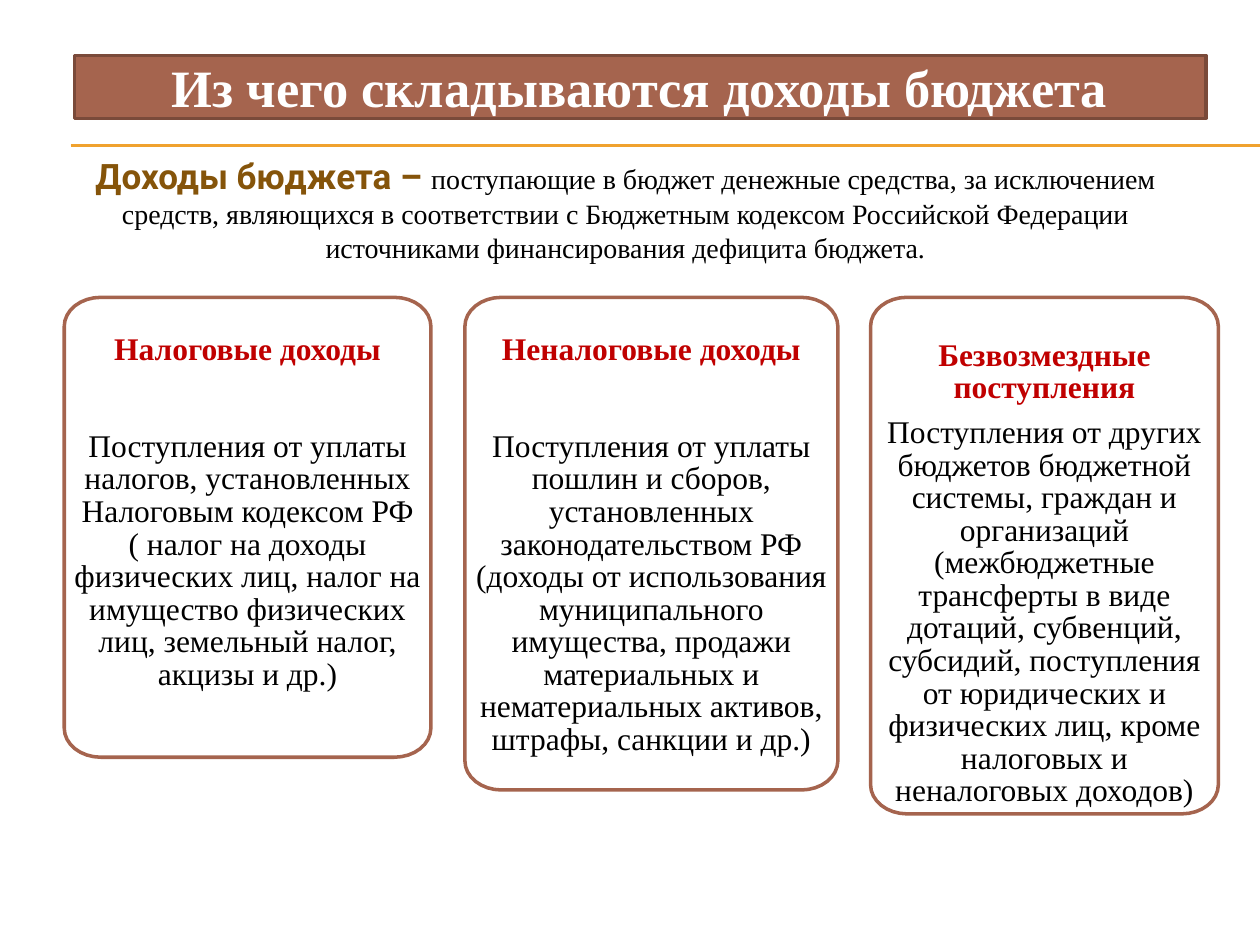
import math

from pptx import Presentation
from pptx.dml.color import RGBColor
from pptx.enum.shapes import MSO_CONNECTOR, MSO_SHAPE
from pptx.enum.text import MSO_ANCHOR, PP_ALIGN
from pptx.oxml.ns import qn
from pptx.util import Inches, Pt

STRAIGHT = MSO_CONNECTOR.STRAIGHT
RECTANGLE = MSO_SHAPE.RECTANGLE
TOP = MSO_ANCHOR.TOP
CENTER = PP_ALIGN.CENTER

WHITE = RGBColor(0xFF, 0xFF, 0xFF)
BLACK = RGBColor(0x00, 0x00, 0x00)
RED = RGBColor(0xC0, 0x00, 0x00)
BROWN = RGBColor(0xA5, 0x64, 0x4E)
DARK_BROWN = RGBColor(0x7A, 0x4A, 0x3A)
OCHRE = RGBColor(0x85, 0x54, 0x0A)
AMBER = RGBColor(0xF0, 0xA2, 0x2E)

SERIF = "Times New Roman"
SANS = "Roboto"

CORNER_WIDTH = Inches(0.29)
CORNER_HEIGHT = Inches(0.23)
CORNER_STEPS = 8

CARDS = [
    {
        "box": (0.51, 2.36, 2.91, 3.65),
        "title": "Налоговые доходы",
        "body": "Поступления от уплаты налогов, установленных Налоговым "
                "кодексом РФ\v( налог на доходы физических лиц, налог на "
                "имущество физических лиц, земельный налог, акцизы и др.)",
        "title_top": 0.29,
        "body_gap": 37,
    },
    {
        "box": (3.69, 2.36, 2.96, 3.91),
        "title": "Неналоговые доходы",
        "body": "Поступления от уплаты пошлин и сборов, установленных "
                "законодательством РФ (доходы от использования "
                "муниципального имущества, продажи материальных и "
                "нематериальных активов, штрафы, санкции и др.)",
        "title_top": 0.29,
        "body_gap": 37,
    },
    {
        "box": (6.91, 2.36, 2.76, 4.1),
        "title": "Безвозмездные\vпоступления",
        "body": "Поступления от других бюджетов бюджетной системы, граждан и "
                "организаций (межбюджетные трансферты в виде дотаций, "
                "субвенций, субсидий, поступления от юридических и "
                "физических лиц, кроме налоговых и неналоговых доходов)",
        "title_top": 0.34,
        "body_gap": 7,
    },
]


def to_lengths(box):
    return [Inches(value) for value in box]


def style_font(font, name, size, color, bold=False):
    font.name = name
    font.size = Pt(size)
    font.color.rgb = color
    font.bold = bold


def style_outline(shape, fill, line):
    shape.shadow.inherit = False
    shape.fill.solid()
    shape.fill.fore_color.rgb = fill
    shape.line.color.rgb = line
    shape.line.width = Pt(2)


def prepare_frame(shape, margin_top=0):
    frame = shape.text_frame
    frame.word_wrap = True
    frame.vertical_anchor = TOP
    frame.margin_left = frame.margin_right = frame.margin_bottom = 0
    frame.margin_top = Inches(margin_top)
    return frame


def add_heading(slide, box, text):
    banner = slide.shapes.add_shape(RECTANGLE, *to_lengths(box))
    style_outline(banner, BROWN, DARK_BROWN)
    paragraph = prepare_frame(banner).paragraphs[0]
    paragraph.text = text
    paragraph.alignment = CENTER
    style_font(paragraph.font, SERIF, 30, WHITE, True)


def add_divider(slide, left, right, heights):
    for y in heights:
        rule = slide.shapes.add_connector(
            STRAIGHT, Inches(left), Inches(y), Inches(right), Inches(y))
        rule.line.color.rgb = AMBER
        rule.line.width = Pt(0.75)
        properties = rule._element.spPr
        properties.append(properties.makeelement(qn("a:effectLst"), {}))


def add_definition(slide, box, term, meaning):
    definition = slide.shapes.add_textbox(*to_lengths(box))
    paragraph = prepare_frame(definition).paragraphs[0]
    paragraph.alignment = CENTER
    term_run = paragraph.add_run()
    term_run.text = term
    style_font(term_run.font, SANS, 20, OCHRE, True)
    meaning_run = paragraph.add_run()
    meaning_run.text = meaning
    style_font(meaning_run.font, SERIF, 16, BLACK)


def rounded_outline(left, top, width, height):
    right, bottom = left + width, top + height
    corners = [
        (right - CORNER_WIDTH, top + CORNER_HEIGHT, -90),
        (right - CORNER_WIDTH, bottom - CORNER_HEIGHT, 0),
        (left + CORNER_WIDTH, bottom - CORNER_HEIGHT, 90),
        (left + CORNER_WIDTH, top + CORNER_HEIGHT, 180),
    ]
    points = []
    for center_x, center_y, start in corners:
        for step in range(CORNER_STEPS + 1):
            angle = math.radians(start + 90 * step / CORNER_STEPS)
            points.append((round(center_x + CORNER_WIDTH * math.cos(angle)),
                           round(center_y + CORNER_HEIGHT * math.sin(angle))))
    return points


def add_card(slide, box, title, body, title_top, body_gap):
    first, *rest = rounded_outline(*to_lengths(box))
    builder = slide.shapes.build_freeform(*first)
    builder.add_line_segments(rest, close=True)
    card = builder.convert_to_shape()
    style_outline(card, WHITE, BROWN)
    frame = prepare_frame(card, title_top)
    title_paragraph = frame.paragraphs[0]
    body_paragraph = frame.add_paragraph()
    title_paragraph.text = title
    body_paragraph.text = body
    body_paragraph.space_before = Pt(body_gap)
    style_font(title_paragraph.font, SERIF, 18, RED, True)
    style_font(body_paragraph.font, SERIF, 18, BLACK)
    for paragraph in frame.paragraphs:
        paragraph.alignment = CENTER
        paragraph.line_spacing = Pt(18.6)


def main():
    presentation = Presentation()
    presentation.slide_width = Inches(10)
    presentation.slide_height = Inches(7.5)
    slide = presentation.slides.add_slide(presentation.slide_layouts[6])
    add_divider(slide, 0.56, 10, (1.15, 1.16))
    add_definition(
        slide, (0.6, 1.23, 8.73, 0.88), "Доходы бюджета – ",
        "поступающие в бюджет денежные средства, за исключением средств, "
        "являющихся в соответствии с Бюджетным кодексом Российской Федерации "
        "источниками финансирования дефицита бюджета.")
    for card in CARDS:
        add_card(slide, **card)
    add_heading(slide, (0.59, 0.44, 8.98, 0.5),
                "Из чего складываются доходы бюджета")
    presentation.save("out.pptx")


if __name__ == "__main__":
    main()
